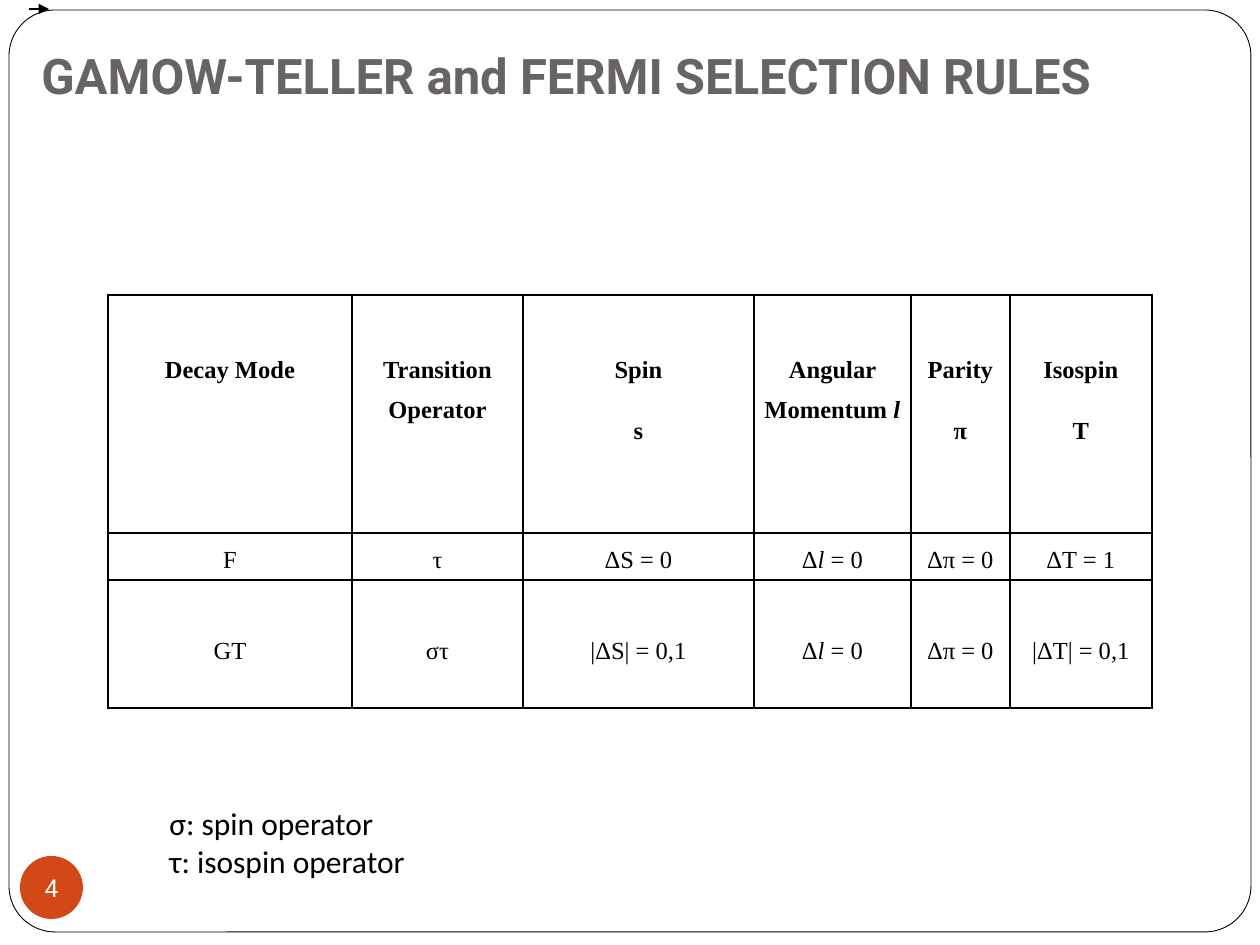
from lxml import etree
from pptx import Presentation
from pptx.dml.color import RGBColor
from pptx.enum.shapes import MSO_CONNECTOR, MSO_SHAPE
from pptx.enum.text import MSO_ANCHOR, PP_ALIGN
from pptx.oxml.ns import qn
from pptx.util import Pt

PX = 914400 / 126
COLORS = {"black": "000000", "white": "FFFFFF", "title": "696464", "badge": "D34817"}
TITLE = {"name": "Roboto", "size": Pt(28), "bold": True, "color": "title"}
NUMBER = {"name": "Roboto", "size": Pt(14), "color": "white"}
NOTE = {"name": "Calibri", "size": Pt(18), "color": "black"}
BODY = {"name": "Times New Roman", "size": Pt(14), "bold": False, "color": "black"}
HEADER = {**BODY, "bold": True}

COLUMN_WIDTHS = [244, 171, 231, 157, 99, 142]
ROW_HEIGHTS = [238, 47, 128]
ROWS = [
    ["Decay Mode", "Transition Operator", "Spin\ns", "Angular Momentum _l_",
     "Parity\nπ", "Isospin\nT"],
    ["F", "τ", "ΔS = 0", "Δ_l_ = 0", "Δπ = 0", "ΔT = 1"],
    ["GT", "στ", "|ΔS| = 0,1", "Δ_l_ = 0", "Δπ = 0", "|ΔT| = 0,1"],
]


def px(value):
    return round(value * PX)


def rgb(name):
    return RGBColor.from_string(COLORS[name])


def set_format(target, values):
    for name, value in values.items():
        if name == "color":
            target.color.rgb = rgb(value)
        else:
            setattr(target, name, value)


def set_margins(target, left, top, right, bottom):
    set_format(target, {"margin_left": px(left), "margin_top": px(top),
                        "margin_right": px(right), "margin_bottom": px(bottom)})


def write_text(text_frame, text, font, **paragraph_format):
    """Write one paragraph per line; words between underscores are italic."""
    for index, line in enumerate(text.split("\n")):
        paragraph = text_frame.add_paragraph() if index else text_frame.paragraphs[0]
        set_format(paragraph, paragraph_format)
        for part, words in enumerate(line.split("_")):
            if words:
                run = paragraph.add_run()
                run.text = words
                set_format(run.font, {**font, "italic": part % 2 == 1})


def add_text(slide, left, top, width, height, text, font, anchor=MSO_ANCHOR.TOP):
    box = slide.shapes.add_textbox(px(left), px(top), px(width), px(height))
    set_format(box.text_frame, {"word_wrap": True, "vertical_anchor": anchor})
    write_text(box.text_frame, text, font)
    return box


def add_filled_shape(slide, kind, left, top, width, height, color):
    shape = slide.shapes.add_shape(kind, px(left), px(top), px(width), px(height))
    shape.shadow.inherit = False
    shape.fill.solid()
    shape.fill.fore_color.rgb = rgb(color)
    shape.line.fill.background()
    return shape


def add_frame(slide, left, top, width, height):
    frame = add_filled_shape(slide, MSO_SHAPE.ROUNDED_RECTANGLE,
                             left, top, width, height, "white")
    frame.adjustments[0] = 0.05
    frame.line.color.rgb = rgb("black")
    frame.line.width = Pt(0.5)


def add_arrow(slide, left, top, length):
    arrow = slide.shapes.add_connector(MSO_CONNECTOR.STRAIGHT, px(left), px(top),
                                       px(left + length), px(top))
    arrow.line.color.rgb = rgb("black")
    arrow.line.width = Pt(0.75)
    etree.SubElement(arrow.line._get_or_add_ln(), qn("a:tailEnd"), type="triangle")
    etree.SubElement(arrow._element.spPr, qn("a:effectLst"))


def add_title(slide, left, top, width, height):
    title = add_text(slide, left, top, width, height,
                     "GAMOW-TELLER and FERMI SELECTION RULES", TITLE, MSO_ANCHOR.BOTTOM)
    title.text_frame.margin_bottom = px(12)


def add_page_number(slide, left, top, size):
    badge = add_filled_shape(slide, MSO_SHAPE.OVAL, left, top, size, size, "badge")
    set_margins(badge.text_frame, 0, 0, 0, 0)
    set_format(badge.text_frame, {"word_wrap": False, "vertical_anchor": MSO_ANCHOR.MIDDLE})
    write_text(badge.text_frame, "4", NUMBER, alignment=PP_ALIGN.CENTER)


def add_borders(cell):
    """Insert the four border lines ahead of the cell's fill, as the schema asks."""
    properties = cell._tc.get_or_add_tcPr()
    for index, side in enumerate(("lnL", "lnR", "lnT", "lnB")):
        line = etree.Element(qn(f"a:{side}"), w=str(Pt(1)))
        fill = etree.SubElement(line, qn("a:solidFill"))
        etree.SubElement(fill, qn("a:srgbClr"), val=COLORS["black"])
        properties.insert(index, line)


def add_rules_table(slide, left, top):
    table = slide.shapes.add_table(
        len(ROW_HEIGHTS), len(COLUMN_WIDTHS), px(left), px(top),
        px(sum(COLUMN_WIDTHS)), px(sum(ROW_HEIGHTS))).table
    set_format(table, {"first_row": False, "horz_banding": False})
    for column, width in zip(table.columns, COLUMN_WIDTHS):
        column.width = px(width)
    for row_index, (row, height, texts) in enumerate(zip(table.rows, ROW_HEIGHTS, ROWS)):
        row.height = px(height)
        is_header = row_index == 0
        is_last = row_index == len(ROWS) - 1
        for cell, text in zip(row.cells, texts):
            cell.fill.background()
            add_borders(cell)
            set_margins(cell, 9, 48 if is_header else 0, 9, 0)
            cell.vertical_anchor = MSO_ANCHOR.MIDDLE if is_last else MSO_ANCHOR.TOP
            write_text(cell.text_frame, text, HEADER if is_header else BODY,
                       alignment=PP_ALIGN.CENTER, line_spacing=1.5, space_after=Pt(12))


def main():
    presentation = Presentation()
    presentation.slide_width = px(1260)
    presentation.slide_height = px(945)
    slide = presentation.slides.add_slide(presentation.slide_layouts[6])
    add_frame(slide, 9, 10, 1242, 922)
    add_rules_table(slide, 108, 295)
    add_arrow(slide, 29, 9, 20)
    add_title(slide, 29, 38, 1231, 78)
    add_page_number(slide, 20, 856, 63)
    add_text(slide, 157, 798, 615, 88, "σ: spin operator\nτ: isospin operator", NOTE)
    presentation.save("out.pptx")


if __name__ == "__main__":
    main()
